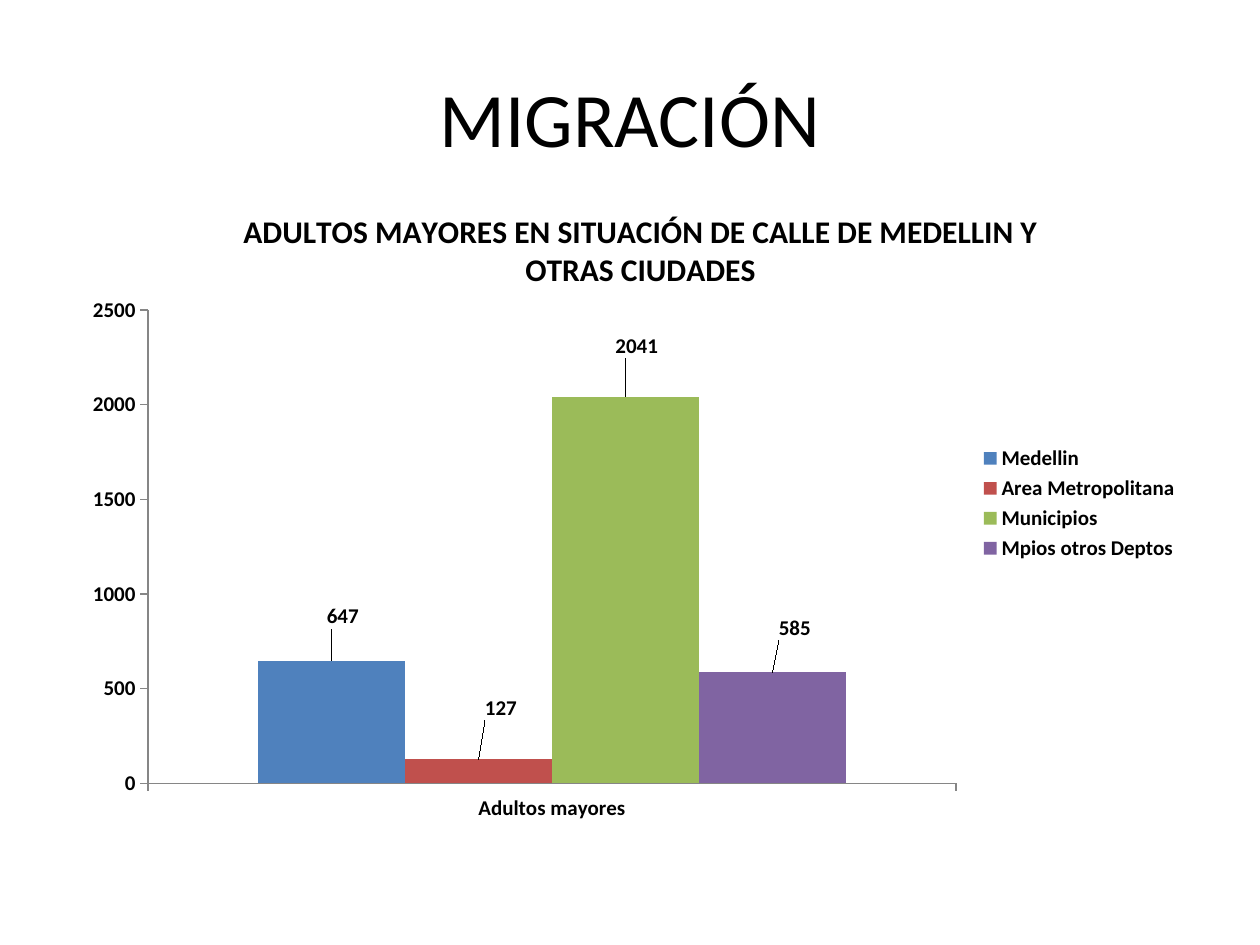
from lxml.etree import SubElement
from pptx import Presentation
from pptx.chart.data import CategoryChartData
from pptx.dml.color import RGBColor
from pptx.enum.chart import XL_CHART_TYPE as ChartType
from pptx.enum.chart import XL_LABEL_POSITION as LabelPosition
from pptx.enum.chart import XL_LEGEND_POSITION as LegendPosition
from pptx.enum.chart import XL_TICK_MARK as TickMark
from pptx.enum.text import MSO_ANCHOR as Anchor
from pptx.enum.text import PP_ALIGN as Align
from pptx.oxml.ns import qn
from pptx.util import Pt

BLACK = RGBColor(0x00, 0x00, 0x00)
GRAY = RGBColor(0x86, 0x86, 0x86)
BLUE = RGBColor(0x4F, 0x81, 0xBD)
RED = RGBColor(0xC0, 0x50, 0x4D)
GREEN = RGBColor(0x9B, 0xBB, 0x59)
PURPLE = RGBColor(0x80, 0x64, 0xA2)
FONT = "Calibri"
CHART_TITLE = "ADULTOS MAYORES EN SITUACIÓN DE CALLE DE MEDELLIN Y OTRAS CIUDADES"
ORIGINS = [
    ("Medellin", 647, BLUE, (0.01, -0.04)),
    ("Area Metropolitana", 127, RED, (0.02, -0.05)),
    ("Municipios", 2041, GREEN, (0.01, -0.05)),
    ("Mpios otros Deptos", 585, PURPLE, (0.02, -0.04)),
]


def style_font(font, size, bold):
    font.name = FONT
    font.size = Pt(size)
    font.bold = bold
    font.color.rgb = BLACK


def add_title(page, text):
    box = page.shapes.add_textbox(Pt(36), Pt(21.6), Pt(648), Pt(90))
    frame = box.text_frame
    frame.word_wrap = True
    frame.vertical_anchor = Anchor.MIDDLE
    para = frame.paragraphs[0]
    para.alignment = Align.CENTER
    span = para.add_run()
    span.text = text
    style_font(span.font, 44, False)


def place(element, index, **settings):
    for old in element.findall(qn("c:layout")):
        element.remove(old)
    layout = SubElement(element, qn("c:layout"))
    element.insert(index, layout)
    manual = SubElement(layout, qn("c:manualLayout"))
    for name, value in settings.items():
        SubElement(manual, qn(f"c:{name}")).set("val", str(value))


def style_axis(axis):
    axis.has_major_gridlines = False
    axis.major_tick_mark = TickMark.OUTSIDE
    axis.minor_tick_mark = TickMark.NONE
    axis.format.line.color.rgb = GRAY
    axis.format.line.width = Pt(0.75)
    style_font(axis.tick_labels.font, 12, True)


def style_series(series, color, offset):
    series.format.fill.solid()
    series.format.fill.fore_color.rgb = color
    labels = series.data_labels
    labels.show_value = True
    labels.number_format = "###0"
    labels.number_format_is_linked = False
    style_font(labels.font, 12, True)
    label = series.points[0].data_label
    style_font(label.font, 12, True)
    label.position = LabelPosition.OUTSIDE_END
    place(labels._element.find(qn("c:dLbl")), 1, x=offset[0], y=offset[1])


def add_chart_title(chart):
    chart.has_title = True
    title = chart.chart_title
    span = title.text_frame.paragraphs[0].add_run()
    span.text = CHART_TITLE
    style_font(span.font, 18, True)
    title.include_in_layout = False
    place(title._element, 1, xMode="edge", yMode="edge", x=0.15, y=0.05)


def add_origin_chart(page):
    data = CategoryChartData(number_format="###0")
    data.categories = ["Adultos mayores"]
    for name, value, _, _ in ORIGINS:
        data.add_series(name, [value])
    frame = page.shapes.add_chart(
        ChartType.COLUMN_CLUSTERED, Pt(39.6), Pt(97.2), Pt(641.5), Pt(380.9), data)
    chart = frame.chart
    style_font(chart.font, 12, True)
    add_chart_title(chart)
    chart.has_legend = True
    chart.legend.position = LegendPosition.RIGHT
    chart.legend.include_in_layout = False
    style_font(chart.legend.font, 12, True)
    style_axis(chart.category_axis)
    style_axis(chart.value_axis)
    chart.value_axis.minimum_scale = 0
    chart.value_axis.maximum_scale = 2500
    chart.value_axis.major_unit = 500
    chart.value_axis.tick_labels.number_format = "###0"
    chart.value_axis.tick_labels.number_format_is_linked = False
    plot = chart.plots[0]
    plot.gap_width = 150
    plot.overlap = 0
    plot.vary_by_categories = False
    for series, (_, _, color, offset) in zip(plot.series, ORIGINS):
        style_series(series, color, offset)
    place(chart._chartSpace.chart.plotArea, 0, layoutTarget="inner",
          xMode="edge", yMode="edge", x=0.07, y=0.21, w=0.72, h=0.71)


def main():
    """Build the migration slide and save it."""
    deck = Presentation()
    deck.slide_width, deck.slide_height = Pt(720), Pt(540)
    page = deck.slides.add_slide(deck.slide_layouts[6])
    add_title(page, "MIGRACIÓN")
    add_origin_chart(page)
    deck.save("out.pptx")


if __name__ == "__main__":
    main()
